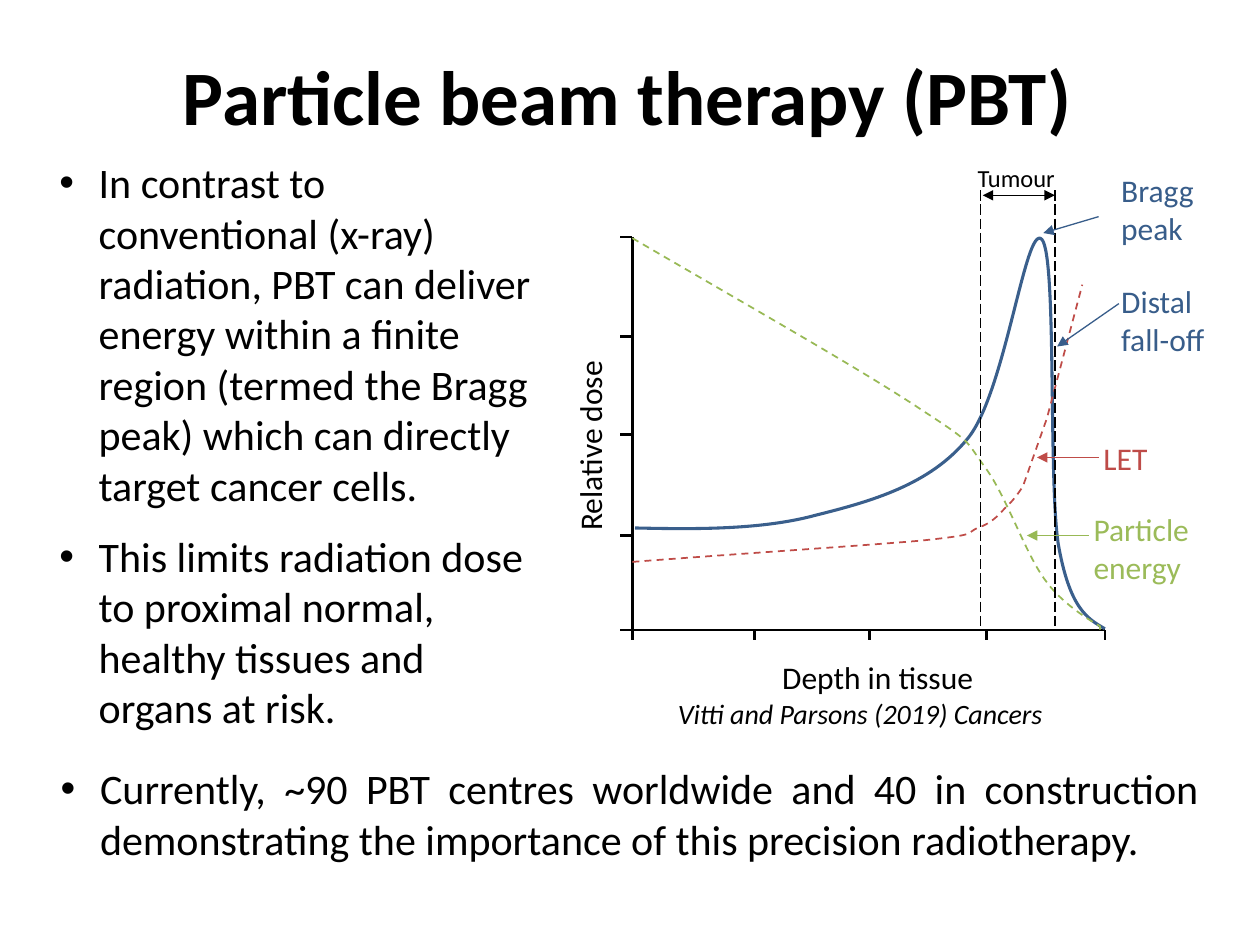
"""Build the particle beam therapy slide with its depth-dose diagram."""
from lxml import etree
from pptx import Presentation
from pptx.dml.color import RGBColor
from pptx.enum import dml, shapes, text
from pptx.oxml import ns
from pptx.util import Pt

BLACK = RGBColor(0x00, 0x00, 0x00)
BLUE = RGBColor(0x38, 0x5D, 0x8A)
DOSE_BLUE = RGBColor(0x3A, 0x5F, 0x8C)
GREEN = RGBColor(0x98, 0xB9, 0x55)
LABEL_GREEN = RGBColor(0x9B, 0xBB, 0x59)
RED = RGBColor(0xBF, 0x4C, 0x48)
LABEL_RED = RGBColor(0xBE, 0x4B, 0x48)


def add_text(container, box, paragraphs, size, color=BLACK):
    shape = container.add_textbox(*[Pt(length) for length in box])
    frame = shape.text_frame
    frame.word_wrap = True
    frame.text = "\n".join(paragraphs)
    for paragraph in frame.paragraphs:
        font = paragraph.runs[0].font
        font.name = "Calibri"
        font.size = Pt(size)
        font.color.rgb = color
    return shape


def add_line(container, points, color=BLACK, width=0.75, ends=(), dash=None):
    line = container.add_connector(
        shapes.MSO_CONNECTOR.STRAIGHT, *[Pt(length) for length in points])
    line.line.color.rgb = color
    line.line.width = Pt(width)
    if dash:
        line.line.dash_style = dash
    outline = line.line._get_or_add_ln()
    for end in ends:
        etree.SubElement(outline, ns.qn(f"a:{end}"), type="triangle")
    etree.SubElement(line._element.spPr, ns.qn("a:effectLst"))


presentation = Presentation()
presentation.slide_width = Pt(720)
presentation.slide_height = Pt(540)
slide = presentation.slides.add_slide(presentation.slide_layouts[6])

title = add_text(slide.shapes, (5.8, 23.8, 705.6, 60.5),
                 ["Particle beam therapy (PBT)"], 44)
title.text_frame.vertical_anchor = text.MSO_ANCHOR.MIDDLE
title.text_frame.paragraphs[0].alignment = text.PP_ALIGN.CENTER
title.text_frame.paragraphs[0].runs[0].font.bold = True

bullet_boxes = [
    ((14, 86, 298, 339), text.PP_ALIGN.LEFT, [
        "In contrast to conventional (x-ray) radiation, PBT can deliver energy "
        "within a finite region (termed the Bragg peak) which can directly "
        "target cancer cells.",
        "This limits radiation dose to proximal normal, healthy tissues and "
        "organs at risk."]),
    ((14.8, 432.4, 677.5, 65.3), text.PP_ALIGN.JUSTIFY, [
        "Currently, ~90 PBT centres worldwide and 40 in construction "
        "demonstrating the importance of this precision radiotherapy."]),
]
for box, alignment, sentences in bullet_boxes:
    shape = add_text(slide.shapes, box, sentences, 24)
    for paragraph in shape.text_frame.paragraphs:
        paragraph.alignment = alignment
        paragraph.space_after = Pt(12)
        properties = paragraph._p.get_or_add_pPr()
        properties.set("marL", str(Pt(35.3)))
        properties.set("indent", str(Pt(-22.5)))
        etree.SubElement(properties, ns.qn("a:buFont"), typeface="Arial")
        etree.SubElement(properties, ns.qn("a:buChar"), char="•")

diagram = slide.shapes.add_group_shape().shapes
left, right, top, bottom = 361.4, 631.4, 135.4, 360
add_line(diagram, (left, top, left, bottom), width=1.5)
add_line(diagram, (left, bottom, right, bottom), width=1.5)
for x in (left, 431.3, 496.8, 563.8, right):
    add_line(diagram, (x, bottom, x, bottom + 5.8), width=1.5)
for y in (top, 192.2, 248.4, 306, bottom):
    add_line(diagram, (left, y, left - 7.2, y), width=1.5)

curves = [
    (DOSE_BLUE, 1.75, None, (362.9, 301.7), [
        (393.8, 302.4, 434.2, 303.1, 465.8, 294.5),
        (497.5, 286.6, 531.4, 277.2, 553, 250.6),
        (574.6, 224.6, 586.1, 126.7, 595.4, 136.8),
        (604.1, 146.9, 599, 273.6, 604.8, 311),
        (611.3, 347.8, 621.4, 353.5, 631.4, 359.3)]),
    (GREEN, 1, dml.MSO_LINE.DASH, (361.4, 136.1), [
        (425.5, 173.5, 490.3, 210.2, 524.2, 232.6),
        (557.3, 254.2, 550.8, 250.6, 563, 267.1),
        (575.3, 283.7, 586.1, 316.8, 597.6, 331.9),
        (608.4, 347, 628.6, 357.8, 628.6, 357.8),
        (628.6, 360)]),
    (RED, 1, dml.MSO_LINE.DASH, (361.4, 321.1), [
        (427, 316.1, 493.9, 311.8, 527, 308.9),
        (560.2, 305.3, 550.8, 305.3, 558.7, 301.7),
        (567.4, 298.8, 571, 293.8, 575.3, 289.4),
        (579.6, 285.8, 584.6, 277.9, 584.6, 277.9),
        (598.3, 239),
        (598.3, 239, 618.5, 162.7, 618.5, 162.7)]),
]
for color, width, dash, start, segments in curves:
    builder = diagram.build_freeform(Pt(start[0]), Pt(start[1]))
    builder.add_line_segments(
        [(Pt(segment[-2]), Pt(segment[-1])) for segment in segments], close=False)
    curve = builder.convert_to_shape()
    steps = list(curve._element.iter(ns.qn("a:lnTo")))
    for step, segment in zip(steps, segments):
        if len(segment) == 6:
            step.tag = ns.qn("a:cubicBezTo")
            for child in list(step):
                step.remove(child)
            for x, y in zip(segment[::2], segment[1::2]):
                etree.SubElement(step, ns.qn("a:pt"), x=str(Pt(x) - curve.left),
                                 y=str(Pt(y) - curve.top))
    curve.shadow.inherit = False
    curve.fill.background()
    curve.line.color.rgb = color
    curve.line.width = Pt(width)
    if dash:
        curve.line.dash_style = dash

tumour_left, tumour_right = 560.2, 602.8
for x in (tumour_left, tumour_right):
    add_line(diagram, (x, 108.7, x, bottom), dash=dml.MSO_LINE.LONG_DASH)
add_line(diagram, (tumour_left + 1.4, 111.6, tumour_right, 111.6),
         ends=("headEnd", "tailEnd"))

pointers = [
    ((596.2, 133.2, 627.8, 123.8), BLUE),
    ((604.1, 198, 639.4, 173.5), BLUE),
    ((586.8, 306, 622.1, 306), GREEN),
    ((592.6, 261.4, 627.8, 261.4), RED),
]
for points, color in pointers:
    add_line(diagram, points, color, ends=("headEnd",))

labels = [
    ((633.6, 94.3, 75.6, 51.1), "Bragg peak", 18, BLUE),
    ((633.6, 157.7, 75.6, 51.1), "Distal fall-off", 18, BLUE),
    ((623.5, 247.4, 69.1, 28.8), "LET", 18, LABEL_RED),
    ((617.8, 288, 74.9, 51.1), "Particle energy", 18, LABEL_GREEN),
    ((551.5, 89.7, 75.6, 24.5), "Tumour", 14, BLACK),
    ((439.9, 372.5, 163.4, 28.8), "Depth in tissue", 18, BLACK),
]
for box, label, size, color in labels:
    add_text(diagram, box, [label], size, color)
dose_label = add_text(diagram, (270.7, 223.9, 138.2, 34.6), ["Relative dose"], 18)
dose_label.rotation = 270

citation = add_text(slide.shapes, (380.2, 394.6, 248.4, 26.6),
                    ["Vitti and Parsons (2019) Cancers"], 16)
citation.text_frame.paragraphs[0].runs[0].font.italic = True

presentation.save("out.pptx")
